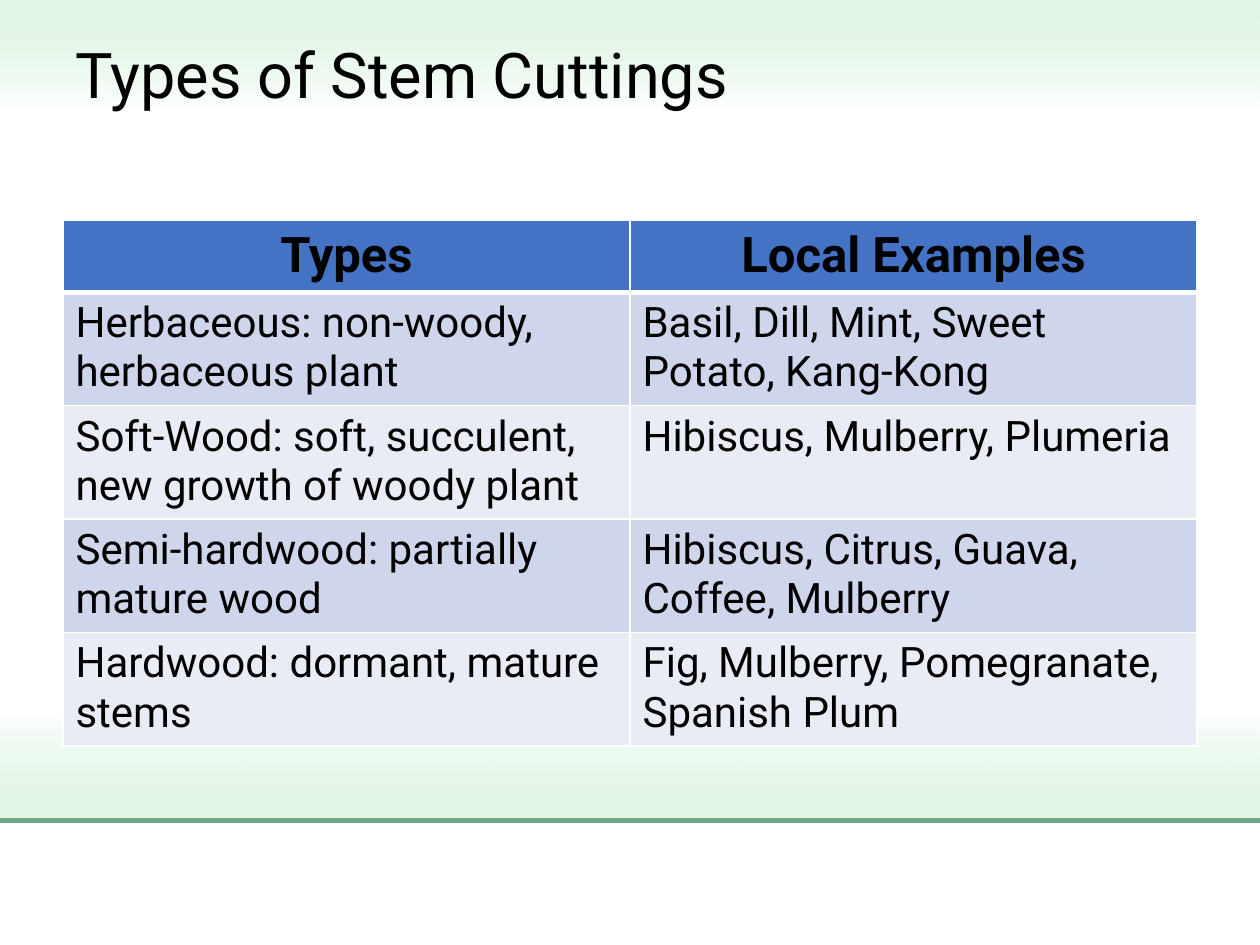
from dataclasses import dataclass

from lxml import etree
from pptx import Presentation
from pptx import util as u
from pptx.dml.color import RGBColor
from pptx.enum import shapes, text
from pptx.oxml import ns


@dataclass(frozen=True)
class Theme:
    font: str = "Roboto"
    ink: str = "000000"
    white: str = "FFFFFF"
    mint: str = "C7EFD0"
    mint_opacity: int = 54
    forest: str = "00542D"
    header: str = "4472C4"
    stripes: tuple = ("CFD5EA", "E9EBF5")
    title_size: int = 36
    header_size: int = 28
    body_size: int = 24


THEME = Theme()
WIDTH, HEIGHT = u.Inches(10), u.Inches(7.5)
MARGIN = 0.05  # share of the slide width
BAND_HEIGHT = 0.12  # share of the slide height
HEADER_ROW, BODY_ROW = u.Inches(0.57), u.Inches(0.9)

CUTTINGS = [
    ("Types", "Local Examples"),
    ("Herbaceous: non-woody, herbaceous plant",
     "Basil, Dill, Mint, Sweet Potato, Kang-Kong"),
    ("Soft-Wood: soft, succulent, new growth of woody plant",
     "Hibiscus, Mulberry, Plumeria"),
    ("Semi-hardwood: partially mature wood",
     "Hibiscus, Citrus, Guava, Coffee, Mulberry"),
    ("Hardwood: dormant, mature stems",
     "Fig, Mulberry, Pomegranate, Spanish Plum"),
]


def across(share):
    return round(WIDTH * share)


def down(share):
    return round(HEIGHT * share)


def rgb(value):
    return RGBColor.from_string(value)


def style_runs(paragraph, size, bold=False):
    for run in paragraph.runs:
        run.font.name = THEME.font
        run.font.size = u.Pt(size)
        run.font.bold = bold
        run.font.color.rgb = rgb(THEME.ink)


def add_ground_line(slide, y):
    ground = slide.shapes.add_connector(
        shapes.MSO_CONNECTOR.STRAIGHT,
        across(-0.016), down(y), across(1.016), down(y))
    ground.line.color.rgb = rgb(THEME.forest)
    ground.line.width = u.Pt(3)
    etree.SubElement(ground.line._get_or_add_ln().getparent(),
                     ns.qn("a:effectLst"))


def add_mint_band(slide, top, rotation=0):
    band = slide.shapes.add_shape(
        shapes.MSO_SHAPE.RECTANGLE, 0, down(top), WIDTH, down(BAND_HEIGHT))
    band.rotation = rotation
    band.shadow.inherit = False
    band.line.fill.background()
    band.fill.gradient()
    band.fill.gradient_angle = 270
    for stop, color in zip(band.fill.gradient_stops, (THEME.mint, THEME.white)):
        stop.color.rgb = rgb(color)
    # The mint end of the gradient is partly transparent
    mint = next(band._element.iter(ns.qn("a:srgbClr")))
    etree.SubElement(mint, ns.qn("a:alpha"),
                     val=str(THEME.mint_opacity * 1000))


def add_title(slide, wording):
    title = slide.shapes.add_textbox(
        across(MARGIN), down(0.04), across(1 - 2 * MARGIN), down(0.14))
    frame = title.text_frame
    frame.word_wrap = True
    frame.vertical_anchor = text.MSO_ANCHOR.TOP
    frame.text = wording
    frame.paragraphs[0].line_spacing = 0.9
    style_runs(frame.paragraphs[0], THEME.title_size)


def set_borders(cell, bottom):
    properties = cell._tc.get_or_add_tcPr()
    widths = {"lnL": 1, "lnR": 1, "lnT": 1, "lnB": bottom}
    for position, (side, width) in enumerate(widths.items()):
        border = etree.Element(ns.qn(f"a:{side}"), w=str(u.Pt(width)))
        fill = etree.SubElement(border, ns.qn("a:solidFill"))
        etree.SubElement(fill, ns.qn("a:srgbClr"), val=THEME.white)
        properties.insert(position, border)


def fill_cell(cell, wording, row):
    is_header = row == 0
    cell.fill.solid()
    cell.fill.fore_color.rgb = rgb(
        THEME.header if is_header else THEME.stripes[(row - 1) % 2])
    set_borders(cell, bottom=3 if is_header else 1)
    cell.text_frame.text = wording
    paragraph = cell.text_frame.paragraphs[0]
    if is_header:
        paragraph.alignment = text.PP_ALIGN.CENTER
    style_runs(paragraph, THEME.header_size if is_header else THEME.body_size,
               bold=is_header)


def add_cuttings_table(slide, rows):
    height = HEADER_ROW + BODY_ROW * (len(rows) - 1)
    table = slide.shapes.add_table(
        len(rows), len(rows[0]), across(MARGIN), u.Inches(1.75),
        across(1 - 2 * MARGIN), height).table
    for row, wordings in enumerate(rows):
        table.rows[row].height = BODY_ROW if row else HEADER_ROW
        for column, wording in enumerate(wordings):
            fill_cell(table.cell(row, column), wording, row)


def main():
    deck = Presentation()
    deck.slide_width, deck.slide_height = WIDTH, HEIGHT
    slide = deck.slides.add_slide(deck.slide_layouts[6])

    # Backdrop: ground line under two mint bands fading inwards
    add_ground_line(slide, 0.868)
    add_mint_band(slide, 0)
    add_mint_band(slide, 0.75, rotation=180)

    # Content
    add_title(slide, "Types of Stem Cuttings")
    add_cuttings_table(slide, CUTTINGS)

    deck.save("out.pptx")


if __name__ == "__main__":
    main()
